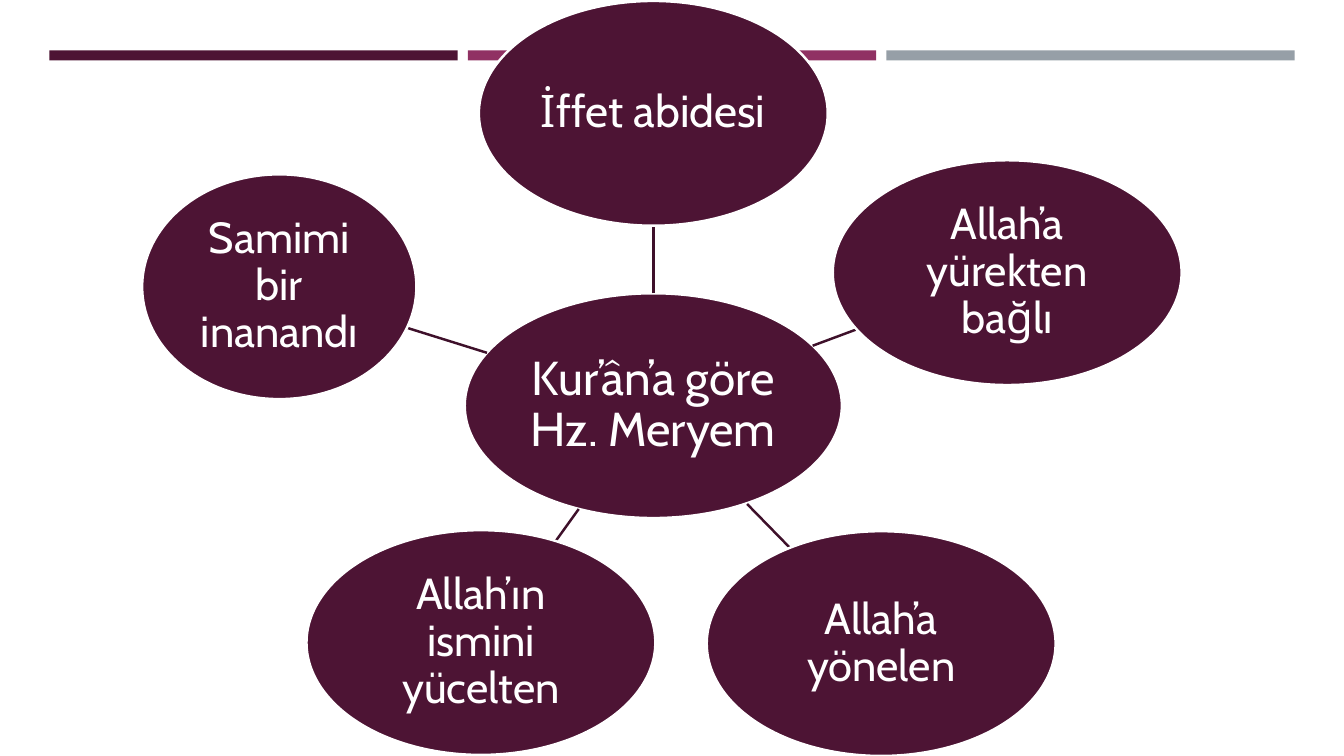
from dataclasses import dataclass

from lxml.etree import SubElement
from pptx import Presentation
from pptx.dml.color import RGBColor
from pptx.enum.shapes import MSO_CONNECTOR, MSO_SHAPE
from pptx.enum.text import MSO_ANCHOR, PP_ALIGN
from pptx.oxml.ns import qn
from pptx.shapes.autoshape import Shape
from pptx.slide import Slide
from pptx.util import Inches, Pt

COLORS = {
    "plum": "4D1434",
    "magenta": "903163",
    "gray": "969FA7",
    "spoke": "3E102A",
    "white": "FFFFFF",
}
FONT = "Cabin"
BUBBLE_HEIGHT = 2.23
LINE_WIDTH = 1.75
BAR_LEFT, BAR_TOP, BAR_WIDTH, BAR_HEIGHT, BAR_STEP = 0.49, 0.5, 4.05, 0.1, 4.15


@dataclass
class Bubble:
    text: str
    left: float
    top: float
    width: float = 3.46
    size: float = 31


@dataclass
class Spoke:
    """Line from the central topic to one trait."""
    x1: float
    y1: float
    x2: float
    y2: float


TOPIC = Bubble("Kur’ân’a göre Hz. Meryem", 4.61, 2.91, width=3.74, size=34)
TRAITS = [
    (Bubble("İffet abidesi", 4.75, 0.01, size=32), Spoke(6.48, 2.91, 6.48, 2.24)),
    (Bubble("Allah’a yürekten bağlı", 8.26, 1.59), Spoke(8.06, 3.43, 8.49, 3.27)),
    (Bubble("Allah’a yönelen", 7.01, 5.27), Spoke(7.41, 5, 7.83, 5.43)),
    (Bubble("Allah’ın ismini yücelten", 3.04, 5.26), Spoke(5.74, 5.05, 5.51, 5.37)),
    (Bubble("Samimi bir inanandı", 1.41, 1.73, width=2.72), Spoke(4.83, 3.5, 4.03, 3.25)),
]


def rgb(name: str) -> RGBColor:
    return RGBColor.from_string(COLORS[name])


def add_filled(slide: Slide, kind: MSO_SHAPE, left: float, top: float,
               width: float, height: float, color: str) -> Shape:
    shape = slide.shapes.add_shape(
        kind, Inches(left), Inches(top), Inches(width), Inches(height))
    shape.shadow.inherit = False
    shape.fill.solid()
    shape.fill.fore_color.rgb = rgb(color)
    shape.line.fill.background()
    return shape


def write_text(shape: Shape, text: str, *, size: float, color: str = "white",
               align: PP_ALIGN = PP_ALIGN.CENTER, spacing: float = 0.9,
               inset: float = 0.02) -> None:
    frame = shape.text_frame
    frame.word_wrap = True
    frame.vertical_anchor = MSO_ANCHOR.MIDDLE
    frame.margin_left = frame.margin_right = Inches(inset)
    frame.margin_top = frame.margin_bottom = Inches(inset)
    paragraph = frame.paragraphs[0]
    paragraph.alignment = align
    paragraph.line_spacing = spacing
    run = paragraph.add_run()
    run.text = text
    run.font.name = FONT
    run.font.size = Pt(size)
    run.font.color.rgb = rgb(color)


def add_bubble(slide: Slide, bubble: Bubble) -> None:
    ellipse = add_filled(slide, MSO_SHAPE.OVAL, bubble.left, bubble.top,
                         bubble.width, BUBBLE_HEIGHT, "plum")
    ellipse.line.color.rgb = rgb("white")
    ellipse.line.width = Pt(LINE_WIDTH)
    write_text(ellipse, bubble.text, size=bubble.size)


def add_spoke(slide: Slide, spoke: Spoke) -> None:
    line = slide.shapes.add_connector(
        MSO_CONNECTOR.STRAIGHT, Inches(spoke.x1), Inches(spoke.y1),
        Inches(spoke.x2), Inches(spoke.y2))
    line.line.color.rgb = rgb("spoke")
    line.line.width = Pt(LINE_WIDTH)
    SubElement(line._element.spPr, qn("a:effectLst"))


def main() -> None:
    deck = Presentation()
    deck.slide_width, deck.slide_height = Inches(13.33), Inches(7.5)
    slide = deck.slides.add_slide(deck.slide_layouts[6])

    for column, color in enumerate(("plum", "magenta", "gray")):
        add_filled(slide, MSO_SHAPE.RECTANGLE, BAR_LEFT + column * BAR_STEP,
                   BAR_TOP, BAR_WIDTH, BAR_HEIGHT, color)

    add_bubble(slide, TOPIC)
    for trait, spoke in TRAITS:
        add_spoke(slide, spoke)
        add_bubble(slide, trait)

    deck.save("out.pptx")


if __name__ == "__main__":
    main()
